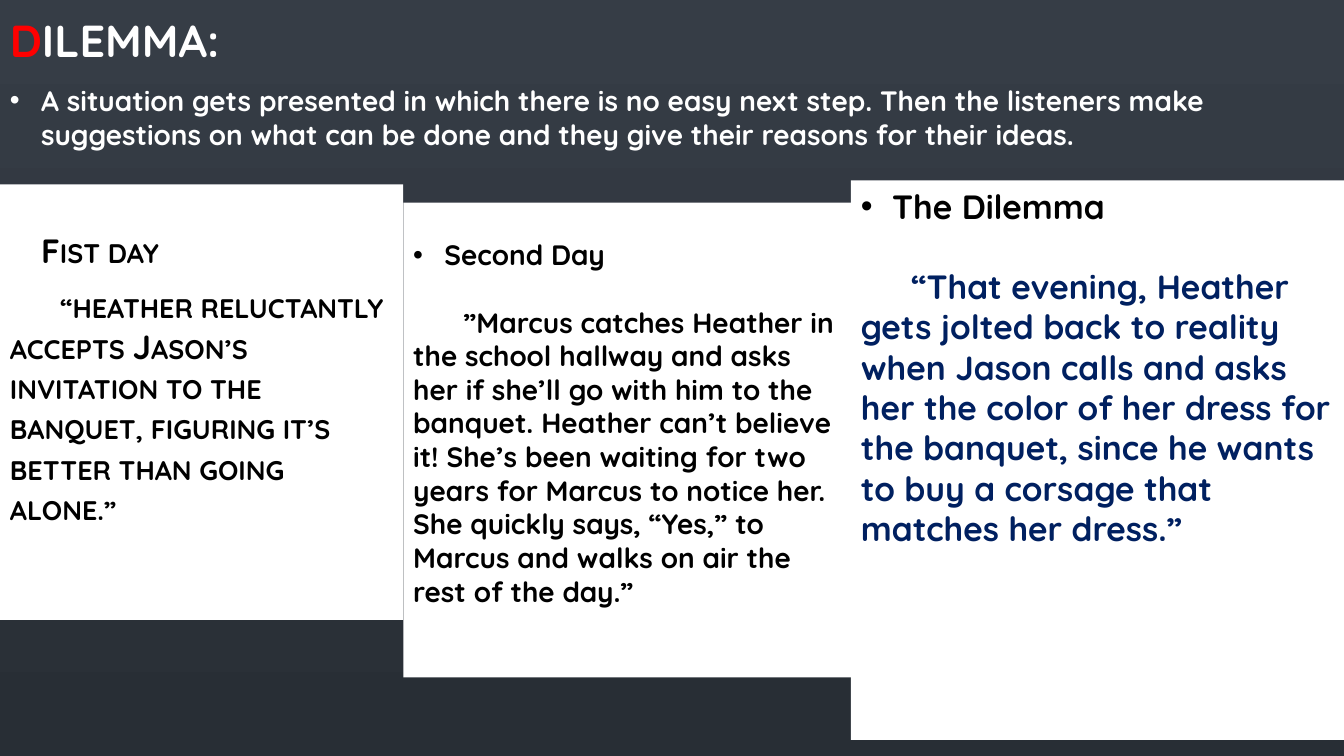
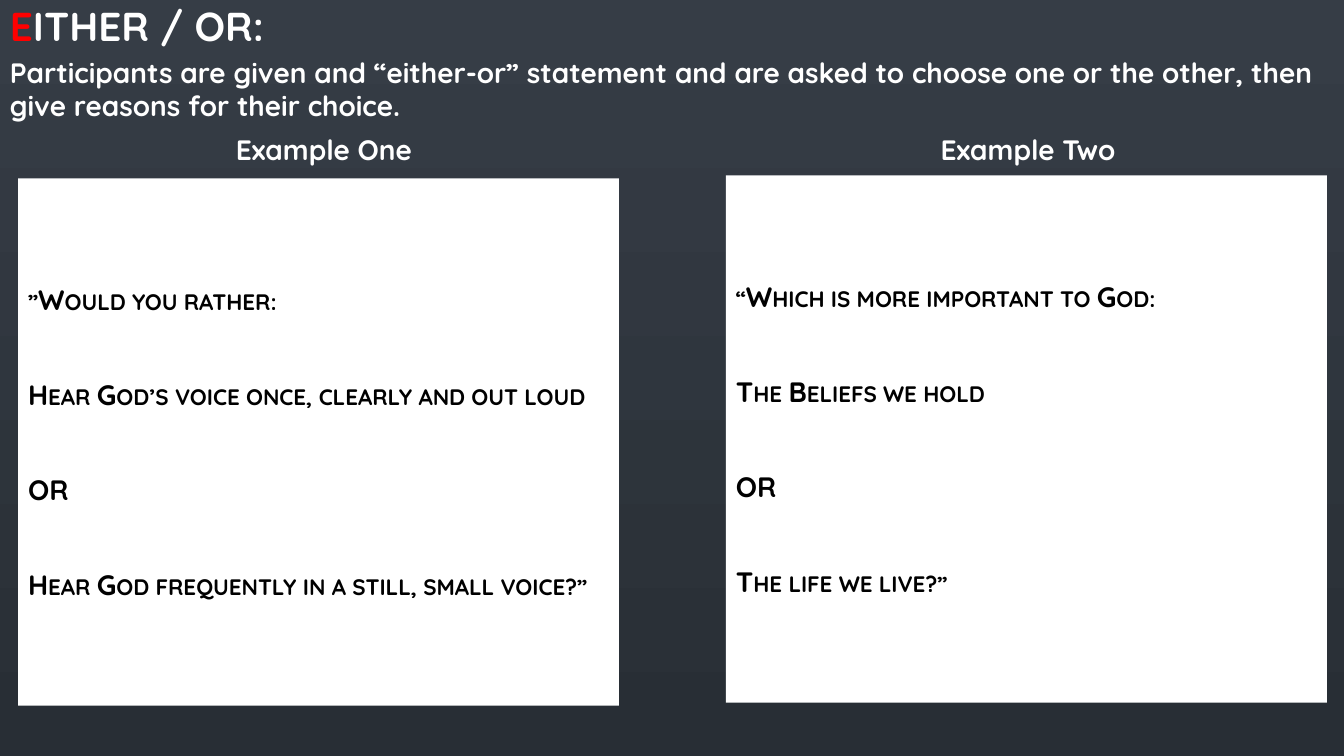
from pptx import Presentation
from pptx.dml.color import RGBColor
from pptx.enum.shapes import MSO_SHAPE
from pptx.enum.text import MSO_ANCHOR
from pptx.oxml import parse_xml
from pptx.oxml.ns import nsdecls
from pptx.util import Inches, Pt

HUES = {
    "top": "363D46",
    "base": "282E35",
    "white": "FFFFFF",
    "black": "000000",
    "red": "FF0000",
    "navy": "002060",
}
FONT = "Quicksand"


def hue(name):
    return RGBColor.from_string(HUES[name])


class Deck:
    def __init__(self):
        self.prs = Presentation()
        self.prs.slide_width = Inches(13.33)
        self.prs.slide_height = Inches(7.5)
        fill = self.prs.slide_master.background.fill
        fill.gradient()
        fill.gradient_angle = 270
        for stop, name, place in zip(fill.gradient_stops, ("top", "base"), (0, 1)):
            stop.color.rgb = hue(name)
            stop.position = place
        self.slide = None

    def page(self):
        self.slide = self.prs.slides.add_slide(self.prs.slide_layouts[6])

    def run(self, para, text, size, color, small=False):
        run = para.add_run()
        run.text = text
        font = run.font
        font.name, font.size, font.bold = FONT, Pt(size), True
        font.color.rgb = hue(color)
        if small:
            run._r.get_or_add_rPr().set("cap", "small")

    def para(self, frame, text, size, color, small=False,
             left=0, first=0, gap=0, bullet=False):
        para = frame.paragraphs[0]
        if para.runs:
            para = frame.add_paragraph()
        props = para._p.get_or_add_pPr()
        if bullet:
            left, first = 0.31, -0.31
            props.append(parse_xml(f'<a:buFont {nsdecls("a")} typeface="Arial"/>'))
            props.append(parse_xml(f'<a:buChar {nsdecls("a")} char="•"/>'))
        props.set("marL", str(Inches(left)))
        props.set("indent", str(Inches(first)))
        if gap:
            para.space_before = Pt(gap)
        self.run(para, text, size, color, small)

    def box(self, x, y, w, h, wrap=True):
        frame = self.slide.shapes.add_textbox(
            Inches(x), Inches(y), Inches(w), Inches(h)).text_frame
        frame.word_wrap = wrap
        return frame

    def title(self, head, rest, size, h):
        frame = self.box(0, 0, 6.58, h)
        frame.vertical_anchor = MSO_ANCHOR.MIDDLE
        para = frame.paragraphs[0]
        self.run(para, head, size, "red")
        self.run(para, rest, size, "white")

    def note(self, x, y, w, h, text, wrap=True, bullet=False):
        self.para(self.box(x, y, w, h, wrap), text, 20, "white", bullet=bullet)

    def panel(self, x, y, w, h, inset=0.05, anchor=MSO_ANCHOR.TOP):
        shape = self.slide.shapes.add_shape(
            MSO_SHAPE.RECTANGLE, Inches(x), Inches(y), Inches(w), Inches(h))
        shape.shadow.inherit = False
        shape.fill.solid()
        shape.fill.fore_color.rgb = hue("white")
        shape.line.fill.background()
        frame = shape.text_frame
        frame.word_wrap = True
        frame.margin_top = Inches(inset)
        frame.vertical_anchor = anchor
        frame.paragraphs[0].alignment = 1
        return frame

    def story(self, area, inset, head, text, size, color="black", gap=0, small=False):
        frame = self.panel(*area, inset=inset)
        self.para(frame, head, size, "black", small,
                  left=0.31, bullet=not small)
        self.para(frame, text, size, color, small, first=0.5, gap=gap)
        for para in frame.paragraphs:
            para.alignment = 1

    def choice(self, area, lines):
        frame = self.panel(*area, anchor=MSO_ANCHOR.MIDDLE)
        for i, text in enumerate(lines):
            self.para(frame, text, 20, "black", True, gap=44 if i else 0)
        for para in frame.paragraphs:
            para.alignment = 1


def main():
    deck = Deck()

    deck.page()
    deck.title("D", "ILEMMA:", 32, 0.78)
    deck.note(0, 0.78, 13.2, 0.77,
              "A situation gets presented in which there is no easy next step. "
              "Then the listeners make suggestions on what can be done and they "
              "give their reasons for their ideas.", bullet=True)
    deck.story((0, 1.83, 4, 4.32), 0.45, "Fist day",
               "“heather reluctantly accepts Jason’s invitation to the banquet, "
               "figuring it’s better than going alone.”", 24, gap=10.8, small=True)
    deck.story((4, 2.01, 4.44, 4.71), 0.35, "Second Day",
               "”Marcus catches Heather in the school hallway and asks her if "
               "she’ll go with him to the banquet. Heather can’t believe it! "
               "She’s been waiting for two years for Marcus to notice her. She "
               "quickly says, “Yes,” to Marcus and walks on air the rest of the "
               "day.”", 20, gap=24)
    deck.story((8.44, 1.79, 4.9, 5.55), 0.05, "The Dilemma",
               "“That evening, Heather gets jolted back to reality when Jason "
               "calls and asks her the color of her dress for the banquet, since "
               "he wants to buy a corsage that matches her dress.”",
               24, "navy", gap=28.8)

    deck.page()
    deck.title("E", "ITHER / OR:", 28.8, 0.5)
    deck.note(0, 0.5, 13.33, 0.77,
              "Participants are given and “either-or” statement and are asked to "
              "choose one or the other, then give reasons for their choice.")
    deck.note(2.24, 1.27, 2.05, 0.44, "Example One", wrap=False)
    deck.note(9.23, 1.27, 1.98, 0.44, "Example Two", wrap=False)
    deck.choice((0.18, 1.77, 5.96, 5.23), (
        "”Would you rather:",
        "Hear God’s voice once, clearly and out loud",
        "OR",
        "Hear God frequently in a still, small voice?”"))
    deck.choice((7.2, 1.74, 5.96, 5.23), (
        "“Which is more important to God:",
        "The Beliefs we hold",
        "OR",
        "The life we live?”"))

    deck.prs.save("out.pptx")


if __name__ == "__main__":
    main()
